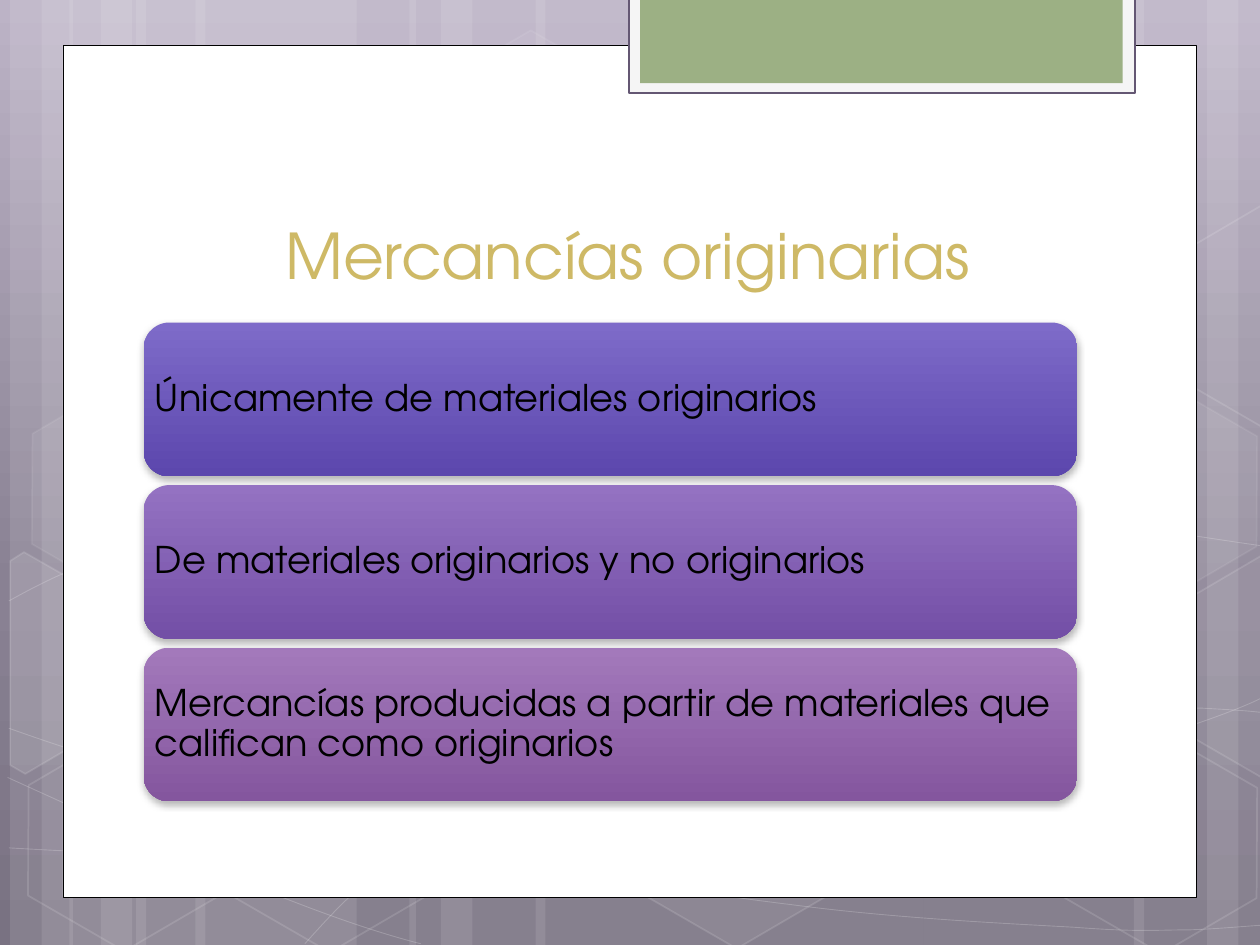
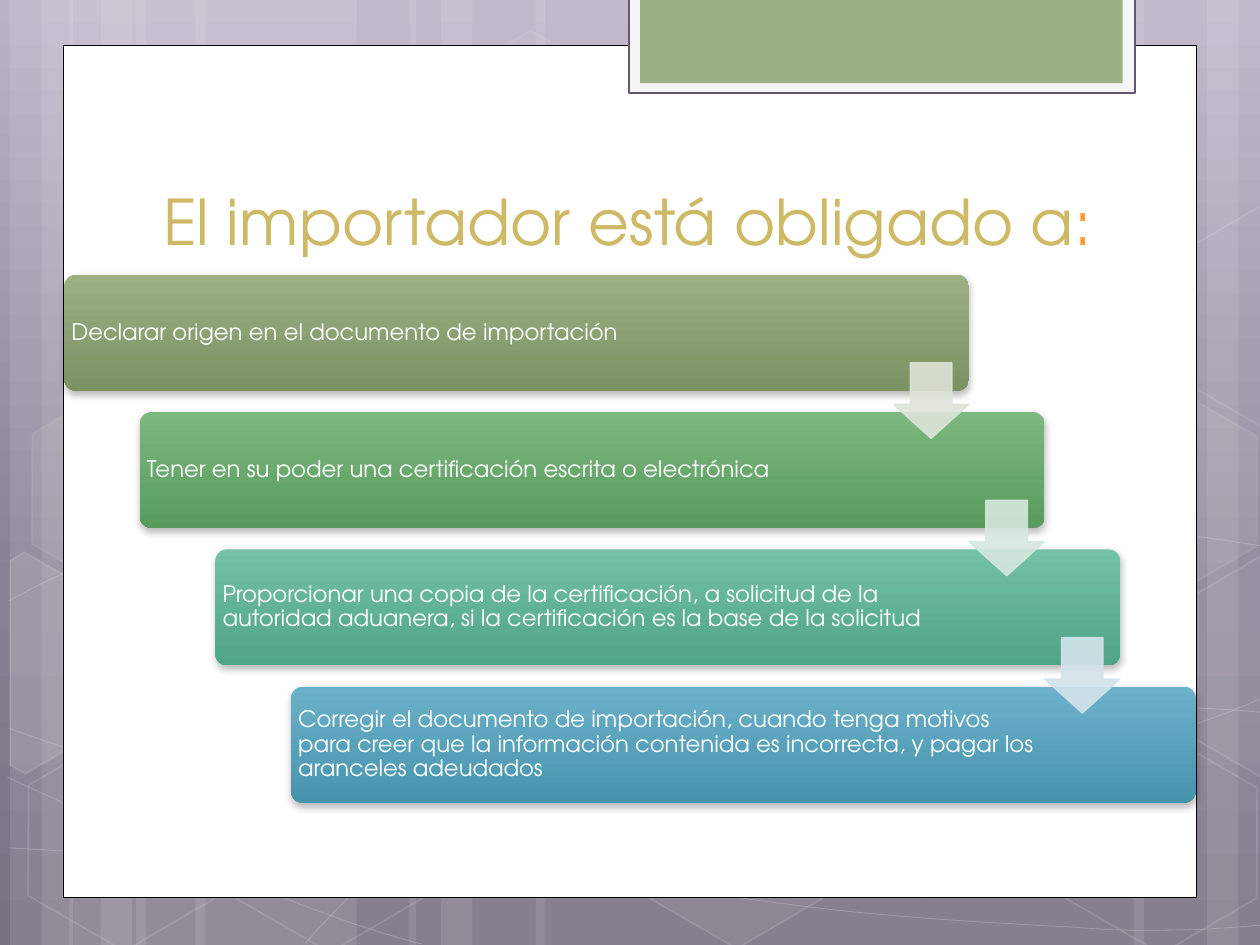
from math import cos, radians, sin

from lxml import etree
from pptx import Presentation
from pptx.dml.color import RGBColor
from pptx.enum.shapes import MSO_SHAPE
from pptx.enum.text import MSO_ANCHOR, PP_ALIGN
from pptx.oxml.ns import qn
from pptx.util import Inches, Pt

RECT, ROUNDED = MSO_SHAPE.RECTANGLE, MSO_SHAPE.ROUNDED_RECTANGLE
HEXAGON, DOWN_ARROW = MSO_SHAPE.HEXAGON, MSO_SHAPE.DOWN_ARROW
MIDDLE, BOTTOM = MSO_ANCHOR.MIDDLE, MSO_ANCHOR.BOTTOM
LEFT, CENTER = PP_ALIGN.LEFT, PP_ALIGN.CENTER

# Content: title runs, then (text, top colour, bottom colour)
ORIGIN_TITLE = [("Mercancías originarias", "CEB966")]
ORIGIN_CLASSES = [
    ("Únicamente de materiales originarios", "7E6BC9", "5C47AD"),
    ("De materiales originarios y no originarios", "9472C2", "734FA6"),
    ("Mercancías producidas a partir de materiales que califican como originarios",
     "A379BB", "84569E"),
]
DUTIES_TITLE = [("El importador está obligado a", "CEB966"), (":", "FF9933")]
DUTIES = [
    ("Declarar origen en el documento de importación", "9CB084", "7C9262"),
    ("Tener en su poder una certificación escrita o electrónica", "7CB87F", "599B5D"),
    ("Proporcionar una copia de la certificación, a solicitud de la autoridad "
     "aduanera, si la certificación es la base de la solicitud", "73C1A6", "50A487"),
    ("Corregir el documento de importación, cuando tenga motivos para creer que la "
     "información contenida es incorrecta, y pagar los aranceles adeudados",
     "6BB1C9", "4793AD"),
]
ARROW_COLOURS = ["DEE4D9", "D6E8DD", "D4E4EB"]

# Shared look
SLIDE_W, SLIDE_H = 10, 7.5
FONT = "TeX Gyre Adventor"
WHITE = "FFFFFF"
TILT = 30
BACKDROP = [(0, "BCB3C6"), (62, "898193"), (100, "797282")]
# Stripes: left, width
STRIPES = [(1.08, 1.75), (0.08, 0.5), (0.33, 0.83), (1.55, 1.75), (0.55, 0.5),
           (0.8, 0.83), (7.33, 1.75), (9.58, 0.5), (9, 0.83), (4.25, 3.08),
           (3.25, 0.5), (3.5, 0.83)]
# Curves: a start point, then per segment two control points and an end point,
# or an end point alone for a straight segment
CURVES = [
    [(0.07, 6.73), (0.61, 6.76, 1.15, 6.79, 1.9, 6.78), (2.65, 6.77, 3.58, 6.75, 4.58, 6.65),
     (5.58, 6.55, 7, 6.36, 7.92, 6.17), (8.83, 5.98, 9.77, 5.68, 10.07, 5.51)],
    [(0.07, 4.77), (0.36, 4.61, 0.65, 4.46, 1.21, 4.31), (1.78, 4.16, 2.59, 3.94, 3.47, 3.87),
     (4.36, 3.8, 5.44, 3.79, 6.54, 3.87), (7.64, 3.95, 9.47, 4.26, 10.07, 4.34)],
    [(0.06, 6.17), (1.27, 6.72, 2.47, 7.27, 3.34, 7.49)],
    [(0.07, 5.78), (0.38, 5.89, 0.7, 6, 1.28, 6.16), (1.86, 6.31, 2.73, 6.56, 3.57, 6.73),
     (4.4, 6.9, 5.45, 7.08, 6.28, 7.18), (7.11, 7.29, 8, 7.33, 8.53, 7.36),
     (9.05, 7.4, 9.19, 7.38, 9.45, 7.38), (9.71, 7.37, 9.89, 7.35, 10.07, 7.34)],
    [(2.42, 7.49), (2.6, 7.29, 2.78, 7.09, 3.02, 6.91), (3.26, 6.73, 3.6, 6.53, 3.88, 6.39),
     (4.16, 6.25, 4.33, 6.19, 4.7, 6.09), (5.06, 5.99, 5.73, 5.85, 6.08, 5.78),
     (6.44, 5.71, 6.49, 5.71, 6.8, 5.69), (7.11, 5.66, 7.6, 5.63, 7.94, 5.62),
     (8.29, 5.61, 8.86, 5.62, 8.86, 5.62), (9.53, 5.62),
     (9.71, 5.63, 9.88, 5.64, 9.97, 5.65), (10.06, 5.66, 10.03, 5.65, 10.06, 5.66)],
]
# Hexagons: left, top, fill opacity (None is hollow), line opacity
HEXAGONS = [(3.34, 0.36, 4, 8), (4.97, 5.89, 6, 12), (0.11, 5.91, None, 12),
            (0.14, 3.12, 7, 8), (1.74, 5.92, None, 12), (7.53, 4.53, 10, 12),
            (8.34, 5.93, None, 12), (8.34, 3.14, 7, 8)]
# Hexagons cut by the slide edge: centre, corners as they appear, fill opacity
CUT_HEXAGONS = [
    ((0.36, 5.35), [(0.08, 4.45), (0.19, 4.38), (0.96, 4.82), (0.95, 5.7), (0.2, 6.14),
                    (0.08, 6.07)], 10),
    ((9.85, 5.2), [(9.26, 4.85), (10.01, 4.41), (10.09, 4.46), (10.09, 6.13),
                   (10.02, 6.17), (9.26, 5.73)], 4),
    ((9.85, 2.41), [(9.26, 2.07), (10.01, 1.63), (10.1, 1.68), (10.09, 3.35),
                    (10.02, 3.39), (9.26, 2.95)], None),
]


def rgb(colour):
    return RGBColor.from_string(colour)


def child(parent, tag, **attributes):
    return etree.SubElement(parent, qn(tag), {k: str(v) for k, v in attributes.items()})


def gradient(fill, owner, stops):
    """Downward gradient; owner is the element that holds the fill."""
    fill.gradient()
    fill.gradient_angle = 270
    stop_list = owner.find(".//" + qn("a:gsLst"))
    for stop in list(stop_list):
        stop_list.remove(stop)
    for share, colour in stops:
        child(child(stop_list, "a:gs", pos=share * 1000), "a:srgbClr", val=colour)


def paint(shape, fill=None, line=None, width=0.5, fill_alpha=100, line_alpha=100):
    shape.shadow.inherit = False
    for target, colour in ((shape.fill, fill), (shape.line.fill, line)):
        if colour:
            target.solid()
            target.fore_color.rgb = rgb(colour)
        else:
            target.background()
    if line:
        shape.line.width = Pt(width)
    properties = shape._element.spPr
    for parent, alpha in ((properties, fill_alpha), (properties.find(qn("a:ln")), line_alpha)):
        colour = parent.find(qn("a:solidFill") + "/" + qn("a:srgbClr"))
        if colour is not None and alpha < 100:
            child(colour, "a:alpha", val=alpha * 1000)


def add_shape(slide, kind, left, top, width, height, adjustments=()):
    shape = slide.shapes.add_shape(kind, *map(Inches, (left, top, width, height)))
    for i, value in enumerate(adjustments):
        shape.adjustments[i] = value
    return shape


def add_outline(slide, points, close):
    corners = [(Inches(x), Inches(y)) for x, y in points]
    builder = slide.shapes.build_freeform(*corners[0])
    builder.add_line_segments(corners[1:], close=close)
    return builder.convert_to_shape()


def add_curve(slide, start, segments):
    """Outline through the end points, whose straight segments are then bent."""
    curve = add_outline(slide, [start] + [segment[-2:] for segment in segments], False)
    lines = curve._element.findall(".//" + qn("a:lnTo"))
    for line, segment in zip(lines, segments):
        if len(segment) == 6:
            bend = etree.Element(qn("a:cubicBezTo"))
            for x, y in zip(segment[::2], segment[1::2]):
                child(bend, "a:pt", x=Inches(x) - curve.left, y=Inches(y) - curve.top)
            line.getparent().replace(line, bend)
    return curve


def add_cut_hexagon(slide, centre, corners):
    """Outline drawn upright around its centre, then tilted into place."""
    c, s = cos(radians(TILT)), sin(radians(TILT))
    offsets = [(x - centre[0], y - centre[1]) for x, y in corners]
    upright = [(centre[0] + dx * c + dy * s, centre[1] + dy * c - dx * s)
               for dx, dy in offsets]
    hexagon = add_outline(slide, upright, True)
    hexagon.rotation = TILT
    return hexagon


def write(shape, runs, size, align, anchor, insets):
    frame = shape.text_frame
    frame.word_wrap = True
    frame.vertical_anchor = anchor
    (frame.margin_left, frame.margin_top,
     frame.margin_right, frame.margin_bottom) = map(Inches, insets)
    paragraph = frame.paragraphs[0]
    paragraph.alignment = align
    for text, colour in runs:
        run = paragraph.add_run()
        run.text = text
        run.font.name, run.font.size = FONT, Pt(size)
        run.font.color.rgb = rgb(colour)
    return paragraph


def add_card(slide, box, content, corner, colour, size, insets):
    """Rounded gradient card with a soft shadow and left-aligned text."""
    text, top_colour, bottom_colour = content
    card = add_shape(slide, ROUNDED, *box, [corner])
    paint(card)
    gradient(card.fill, card._element, [(0, top_colour), (100, bottom_colour)])
    effects = card._element.spPr.find(qn("a:effectLst"))
    shadow = child(effects, "a:outerShdw", blurRad=Pt(4), dist=Pt(2), dir=5400000,
                   rotWithShape=0)
    child(child(shadow, "a:srgbClr", val="000000"), "a:alpha", val=28000)
    write(card, [(text, colour)], size, LEFT, MIDDLE, insets).line_spacing = 0.9


def add_base_slide(deck, title, title_bottom):
    slide = deck.slides.add_slide(deck.slide_layouts[6])
    gradient(slide.background.fill, slide._element, BACKDROP)
    # Background pattern
    for left, width in STRIPES:
        paint(add_shape(slide, RECT, left, 0, width, SLIDE_H), WHITE, fill_alpha=10)
    for start, *segments in CURVES:
        paint(add_curve(slide, start, segments), line=WHITE, line_alpha=20)
    for left, top, fill_alpha, line_alpha in HEXAGONS:
        hexagon = add_shape(slide, HEXAGON, left, top, 1.75, 1.52, [0.285, 1.155])
        hexagon.rotation = TILT
        paint(hexagon, fill_alpha and WHITE, WHITE, 1, fill_alpha or 100, line_alpha)
    for centre, corners, fill_alpha in CUT_HEXAGONS:
        paint(add_cut_hexagon(slide, centre, corners), fill_alpha and WHITE, WHITE, 1,
              fill_alpha or 100, 12)
    # White page and green tab
    paint(add_shape(slide, RECT, 0.5, 0.36, 9, 6.76), WHITE, "000000")
    paint(add_shape(slide, RECT, 4.99, -0.02, 4.02, 0.76), "F5F5F5", "645773", 1.25)
    paint(add_shape(slide, RECT, 5.08, -0.02, 3.83, 0.68), "9CB084")
    # Title
    box = slide.shapes.add_textbox(*map(Inches, (1.14, title_bottom - 1.25, 7.68, 1.25)))
    write(box, title, 36, CENTER, BOTTOM, (0.1, 0.05, 0.1, 0.05))
    return slide


def build_origin_slide(deck):
    slide = add_base_slide(deck, ORIGIN_TITLE, 2.37)
    for row, content in enumerate(ORIGIN_CLASSES):
        add_card(slide, (1.14, 2.56 + 1.29 * row, 7.41, 1.22), content, 0.167,
                 "000000", 21, (0.03, 0, 0.03, 0))


def build_duties_slide(deck):
    slide = add_base_slide(deck, DUTIES_TITLE, 2.1)
    width, height, arrow_size = 7.18, 0.92, 0.6
    places = [(0.51 + 0.6 * i, 2.18 + 1.09 * i) for i in range(len(DUTIES))]
    for (left, top), content in zip(places, DUTIES):
        add_card(slide, (left, top, width, height), content, 0.1,
                 WHITE, 13, (0.03, 0, 1.18, 0))
    # Arrows hang from the lower right corner of each step but the last
    for (left, top), colour in zip(places, ARROW_COLOURS):
        arrow = add_shape(slide, DOWN_ARROW, left + width - arrow_size, top + 0.7,
                          arrow_size, arrow_size, [0.55, 0.45])
        paint(arrow, colour, colour, 0.75, 90, 90)


def main():
    deck = Presentation()
    deck.slide_width, deck.slide_height = Inches(SLIDE_W), Inches(SLIDE_H)
    build_origin_slide(deck)
    build_duties_slide(deck)
    deck.save("out.pptx")


if __name__ == "__main__":
    main()
